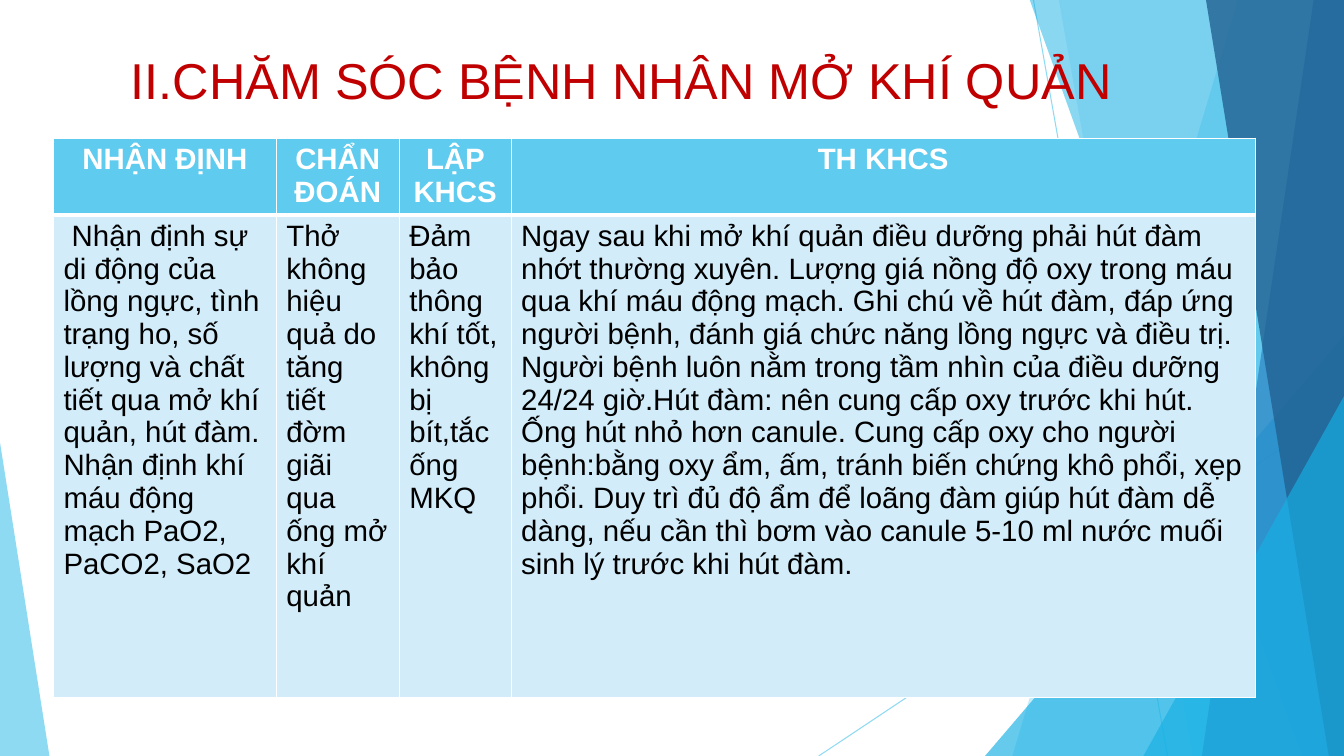
"""Build the tracheostomy care slide: faceted backdrop, care plan table and title."""
from dataclasses import dataclass

from lxml import etree
from pptx import Presentation
from pptx import util as u
from pptx.dml.color import RGBColor
from pptx.enum import shapes, text
from pptx.oxml import ns


@dataclass(frozen=True)
class Theme:
    font: str = "Arial"
    title_size: int = 36
    table_size: int = 21
    title: str = "C00000"
    sky: str = "5FCBEF"
    cyan: str = "17B0E4"
    blue: str = "2E83C3"
    navy: str = "226292"
    pale: str = "D2ECF9"
    white: str = "FFFFFF"
    black: str = "000000"


theme = Theme()


def write(frame, words, size, color, bold=False, align=text.PP_ALIGN.LEFT):
    """Put one formatted paragraph into a text frame."""
    frame.word_wrap = True
    paragraph = frame.paragraphs[0]
    paragraph.alignment = align
    run = paragraph.add_run()
    run.text = words
    run.font.name = theme.font
    run.font.size = u.Pt(size)
    run.font.bold = bold
    run.font.color.rgb = RGBColor.from_string(color)


def set_alpha(fill_parent, percent):
    """Make the solid colour below an element partly transparent."""
    color = fill_parent.find(".//" + ns.qn("a:srgbClr"))
    etree.SubElement(color, ns.qn("a:alpha"), val=str(percent * 1000))


presentation = Presentation()
presentation.slide_width = u.Inches(13.33)
presentation.slide_height = u.Inches(7.5)
slide = presentation.slides.add_slide(presentation.slide_layouts[6])

for x1, y1, x2, y2 in [(10.25, 0, 11.58, 7.5), (13.33, 4.03, 8.12, 7.5)]:
    ray = slide.shapes.add_connector(
        shapes.MSO_CONNECTOR.STRAIGHT,
        u.Inches(x1), u.Inches(y1), u.Inches(x2), u.Inches(y2))
    ray.line.width = u.Pt(0.75)
    ray.line.color.rgb = RGBColor.from_string(theme.sky)
    properties = ray.element.spPr
    set_alpha(properties, 70)
    etree.SubElement(properties, ns.qn("a:effectLst"))

# Bands give top and bottom x; triangles give left, top, width, height, apex.
facets = [
    ((12.28, 10.04), theme.sky, 36),
    ((10.5, 11.83), theme.sky, 20),
    ((9.77, 3.33, 3.56, 4.17, 1), theme.cyan, 66),
    ((10.21, 12.91), theme.cyan, 50),
    ((13.03, 11.92), theme.blue, 70),
    ((11.96, 13.18), theme.navy, 80),
    ((11.34, 3.93, 1.99, 3.57, 1), theme.cyan, 66),
    ((0, 4.39, 0.49, 3.11, 0), theme.sky, 70),
]
for geometry, color, opacity in facets:
    if len(geometry) == 2:
        top_x, bottom_x = geometry
        corners = [(13.33, -0.01), (13.33, 7.5), (bottom_x, 7.5)]
        builder = slide.shapes.build_freeform(u.Inches(top_x), u.Inches(-0.01))
        builder.add_line_segments([(u.Inches(x), u.Inches(y)) for x, y in corners])
        facet = builder.convert_to_shape()
    else:
        *box, apex = geometry
        facet = slide.shapes.add_shape(
            shapes.MSO_SHAPE.ISOSCELES_TRIANGLE, *[u.Inches(value) for value in box])
        facet.adjustments[0] = apex
    facet.shadow.inherit = False
    facet.fill.solid()
    facet.fill.fore_color.rgb = RGBColor.from_string(color)
    facet.line.fill.background()
    set_alpha(facet.element.spPr, opacity)

columns = [
    (2.21, "NHẬN ĐỊNH",
     " Nhận định sự di động của lồng ngực, tình trạng ho, số lượng và chất tiết "
     "qua mở khí quản, hút đàm. Nhận định khí máu động mạch PaO2, PaCO2, SaO2"),
    (1.22, "CHẨN ĐOÁN",
     "Thở không hiệu quả do tăng tiết đờm giãi qua ống mở khí quản"),
    (1.11, "LẬP KHCS",
     "Đảm bảo thông khí tốt, không bị bít,tắc ống MKQ"),
    (7.38, "TH KHCS",
     "Ngay sau khi mở khí quản điều dưỡng phải hút đàm nhớt thường xuyên. "
     "Lượng giá nồng độ oxy trong máu qua khí máu động mạch. Ghi chú về hút đàm, "
     "đáp ứng người bệnh, đánh giá chức năng lồng ngực và điều trị. "
     "Người bệnh luôn nằm trong tầm nhìn của điều dưỡng 24/24 giờ."
     "Hút đàm: nên cung cấp oxy trước khi hút. Ống hút nhỏ hơn canule. "
     "Cung cấp oxy cho người bệnh:bằng oxy ẩm, ấm, tránh biến chứng khô phổi, "
     "xẹp phổi. Duy trì đủ độ ẩm để loãng đàm giúp hút đàm dễ dàng, nếu cần thì "
     "bơm vào canule 5-10 ml nước muối sinh lý trước khi hút đàm."),
]
row_styles = [
    dict(fill=theme.sky, borders=dict(lnL=1, lnR=1, lnT=1, lnB=3),
         font=dict(color=theme.white, bold=True, align=text.PP_ALIGN.CENTER)),
    dict(fill=theme.pale, borders=dict(lnL=1, lnR=1, lnT=3, lnB=1),
         font=dict(color=theme.black)),
]
table = slide.shapes.add_table(
    2, len(columns), u.Inches(0.53), u.Inches(1.37), u.Inches(11.92), u.Inches(5.55)).table
for row, height in zip(table.rows, (0.76, 4.79)):
    row.height = u.Inches(height)
for column_index, (width, *entries) in enumerate(columns):
    table.columns[column_index].width = u.Inches(width)
    for row_index, (words, style) in enumerate(zip(entries, row_styles)):
        cell = table.cell(row_index, column_index)
        write(cell.text_frame, words, theme.table_size, **style["font"])
        cell.fill.solid()
        cell.fill.fore_color.rgb = RGBColor.from_string(style["fill"])
        cell_properties = cell._tc.get_or_add_tcPr()
        for position, (side, points) in enumerate(style["borders"].items()):
            border = etree.Element(ns.qn("a:" + side), w=str(u.Pt(points)))
            solid = etree.SubElement(border, ns.qn("a:solidFill"))
            etree.SubElement(solid, ns.qn("a:srgbClr"), val=theme.white)
            cell_properties.insert(position, border)

title = slide.shapes.add_textbox(
    u.Inches(1.2), u.Inches(0.44), u.Inches(11.01), u.Inches(0.71))
write(title.text_frame, "II.CHĂM SÓC BỆNH NHÂN MỞ KHÍ QUẢN", theme.title_size, theme.title)
title.text_frame.auto_size = text.MSO_AUTO_SIZE.SHAPE_TO_FIT_TEXT

presentation.save("out.pptx")
